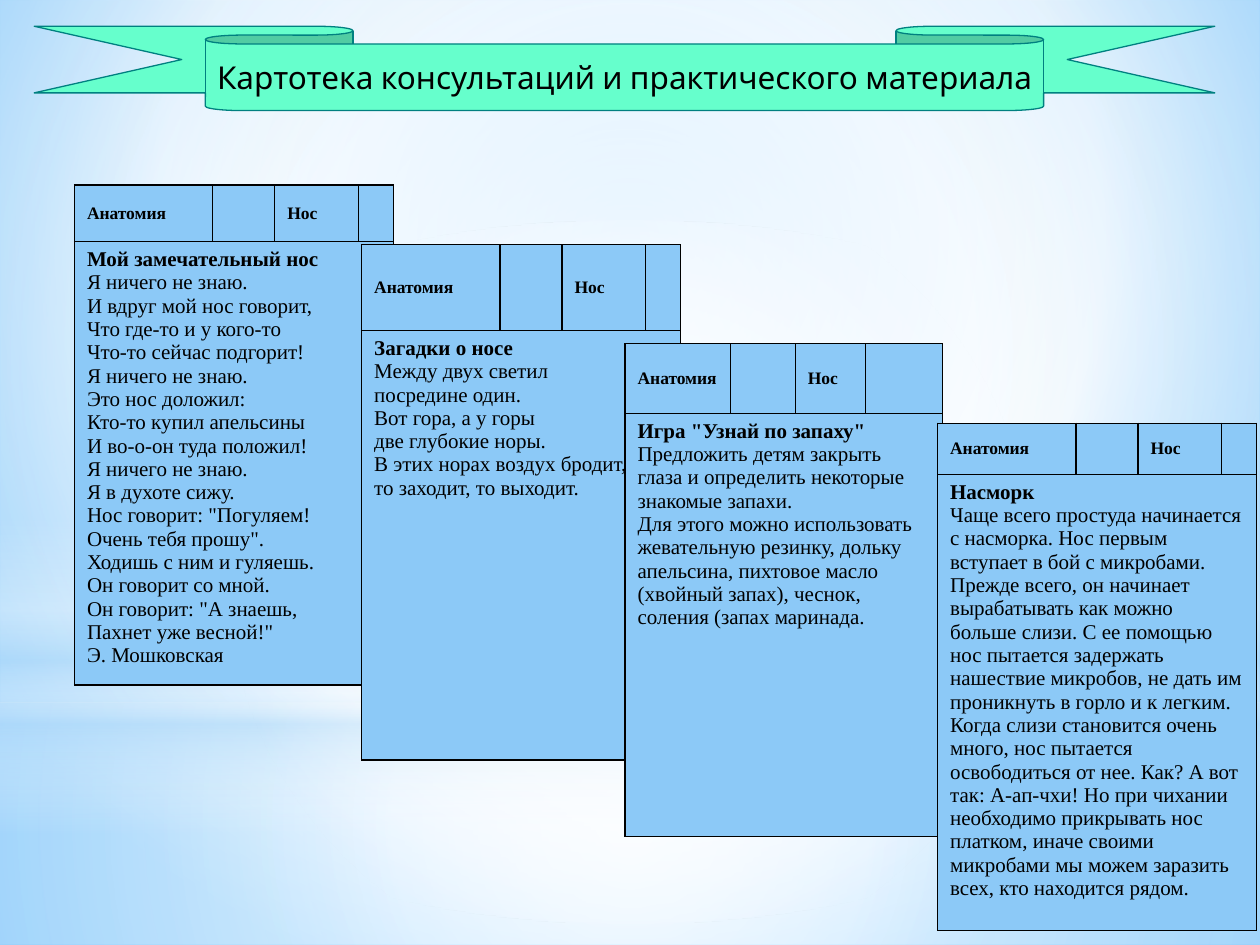
from dataclasses import dataclass

from lxml import etree
from pptx import Presentation
from pptx.dml.color import RGBColor
from pptx.enum.shapes import MSO_SHAPE
from pptx.enum.text import MSO_ANCHOR, PP_ALIGN
from pptx.oxml.ns import qn
from pptx.util import Cm, Pt

RECTANGLE = MSO_SHAPE.RECTANGLE
OVAL = MSO_SHAPE.OVAL
RIBBON = MSO_SHAPE.DOWN_RIBBON
MIDDLE = MSO_ANCHOR.MIDDLE
TOP = MSO_ANCHOR.TOP
CENTER = PP_ALIGN.CENTER

COLORS = {
    "white": "FFFFFF",
    "pale_blue": "B4DCFA",
    "sky": "9ED5FF",
    "deep_sky": "5BB9FF",
    "card": "8CC9F7",
    "ribbon": "66FFCC",
    "ribbon_line": "008080",
    "ink": "000000",
}
CARD_FONT = "Times New Roman"
TITLE_FONT = "Karla"
MIDPOINT = (50, 50, 50, 50)


@dataclass
class Gradient:
    stops: list[tuple[int, str, int]]
    focus: tuple[int, int, int, int] | None = MIDPOINT


@dataclass
class Glow:
    kind: int
    top: float
    height: float
    gradient: Gradient


@dataclass
class Card:
    left: float
    top: float
    columns: tuple[float, ...]
    rows: tuple[float, float]
    heading: str
    paragraphs: list[str]


BACKDROP = Gradient([(0, "sky", 100), (60, "white", 100), (100, "deep_sky", 100)], (20, 10, 20, 60))
GLOWS = [
    Glow(RECTANGLE, 14.17, 4.88, Gradient([(0, "white", 91), (37, "white", 76), (100, "pale_blue", 79)])),
    Glow(RECTANGLE, 0, 14.17, Gradient([(0, "white", 89), (48, "white", 62), (100, "pale_blue", 79)])),
    Glow(RECTANGLE, 10.46, 6.35, Gradient([
        (0, "white", 0), (29, "white", 30), (45, "pale_blue", 40),
        (55, "white", 26), (65, "pale_blue", 60), (100, "white", 0)], None)),
    Glow(OVAL, 4.45, 14.17, Gradient([(0, "white", 100), (56, "white", 0)])),
]

WIDE_COLUMNS = (2.79, 1.25, 1.68, 0.71)
CARDS = [
    Card(1.5, 3.73, WIDE_COLUMNS, (1.14, 8.94), "Мой замечательный нос", [
        "Я ничего не знаю.\nИ вдруг мой нос говорит,\nЧто где-то и у кого-то\n"
        "Что-то сейчас подгорит!\nЯ ничего не знаю.\nЭто нос доложил:\n"
        "Кто-то купил апельсины\nИ во-о-он туда положил!\nЯ ничего не знаю.\n"
        "Я в духоте сижу.\nНос говорит: \"Погуляем!\nОчень тебя прошу\".\n"
        "Ходишь с ним и гуляешь.\nОн говорит со мной.\nОн говорит: \"А знаешь,\n"
        "Пахнет уже весной!\"",
        "Э. Мошковская"]),
    Card(7.29, 4.93, WIDE_COLUMNS, (1.73, 8.66), "Загадки о носе", [
        "Между двух светил",
        "посредине один.\nВот гора, а у горы",
        "две глубокие норы.\nВ этих норах воздух бродит,\nто заходит, то выходит."]),
    Card(12.6, 6.93, (2.13, 1.3, 1.42, 1.55), (1.4, 8.53), "Игра \"Узнай по запаху\"", [
        "Предложить детям закрыть глаза и определить некоторые знакомые запахи.",
        "Для этого можно использовать жевательную резинку, дольку апельсина, "
        "пихтовое масло (хвойный запах), чеснок, соления (запах маринада."]),
    Card(18.9, 8.53, WIDE_COLUMNS, (0.99, 9.19), "Насморк", [
        "Чаще всего простуда начинается с насморка. Нос первым вступает в бой с "
        "микробами. Прежде всего, он начинает вырабатывать как можно больше слизи. "
        "С ее помощью нос пытается задержать нашествие микробов, не дать им "
        "проникнуть в горло и к легким. Когда слизи становится очень много, нос "
        "пытается освободиться от нее. Как? А вот так: А-ап-чхи! Но при чихании "
        "необходимо прикрывать нос платком, иначе своими микробами мы можем "
        "заразить всех, кто находится рядом."]),
]


def color(name: str) -> RGBColor:
    return RGBColor.from_string(COLORS[name])


def add_element(parent, tag: str, **attributes):
    return etree.SubElement(parent, qn(tag), {key: str(value) for key, value in attributes.items()})


def paint_gradient(fill, owner, gradient: Gradient) -> None:
    fill.gradient()
    element = owner.find(".//" + qn("a:gradFill"))
    for child in list(element):
        element.remove(child)
    stop_list = add_element(element, "a:gsLst")
    for position, name, opacity in gradient.stops:
        stop = add_element(stop_list, "a:gs", pos=position * 1000)
        stop_color = add_element(stop, "a:srgbClr", val=COLORS[name])
        if opacity < 100:
            add_element(stop_color, "a:alpha", val=opacity * 1000)
    if gradient.focus is None:
        add_element(element, "a:lin", ang=90 * 60000, scaled=0)
    else:
        circle = add_element(element, "a:path", path="circle")
        sides = {side: value * 1000 for side, value in zip("ltrb", gradient.focus)}
        add_element(circle, "a:fillToRect", **sides)


def add_glow(slide, glow: Glow) -> None:
    shape = slide.shapes.add_shape(glow.kind, 0, Cm(glow.top), Cm(25.4), Cm(glow.height))
    shape.shadow.inherit = False
    shape.line.fill.background()
    paint_gradient(shape.fill, shape._element.spPr, glow.gradient)


def format_font(font, size: float, name: str, bold: bool) -> None:
    for attribute, value in {"size": Pt(size), "name": name, "bold": bold}.items():
        setattr(font, attribute, value)
    font.color.rgb = color("ink")


def write_paragraph(paragraph, text: str, size: float, name: str, bold: bool = False) -> None:
    paragraph.text = text
    for run in paragraph.runs:
        format_font(run.font, size, name, bold)
    for line_break in paragraph._p.findall(qn("a:br")):
        add_element(line_break, "a:rPr", sz=size * 100)


def style_cell(cell) -> None:
    properties = cell._tc.get_or_add_tcPr()
    for side in ("L", "R", "T", "B"):
        border = add_element(properties, f"a:ln{side}", w=Pt(0.75))
        add_element(add_element(border, "a:solidFill"), "a:srgbClr", val=COLORS["ink"])
    cell.fill.solid()
    cell.fill.fore_color.rgb = color("card")


def add_card(slide, card: Card) -> None:
    frame = slide.shapes.add_table(2, 4, Cm(card.left), Cm(card.top),
                                   Cm(sum(card.columns)), Cm(sum(card.rows)))
    table = frame.table
    table.first_row = table.horz_banding = False
    for column, width in zip(table.columns, card.columns):
        column.width = Cm(width)
    for row, height in zip(table.rows, card.rows):
        row.height = Cm(height)
    for cell in table.iter_cells():
        style_cell(cell)
    for index, label in ((0, "Анатомия"), (2, "Нос")):
        cell = table.cell(0, index)
        cell.vertical_anchor = MIDDLE
        write_paragraph(cell.text_frame.paragraphs[0], label, 10, CARD_FONT, True)
    body = table.cell(1, 0)
    body.merge(table.cell(1, 3))
    body.vertical_anchor = TOP
    write_paragraph(body.text_frame.paragraphs[0], card.heading, 12, CARD_FONT, True)
    for text in card.paragraphs:
        write_paragraph(body.text_frame.add_paragraph(), text, 12, CARD_FONT)


def add_title_ribbon(slide) -> None:
    ribbon = slide.shapes.add_shape(RIBBON, Cm(0.69), Cm(0.53), Cm(23.8), Cm(1.7))
    ribbon.shadow.inherit = False
    ribbon.adjustments[0] = 0.21
    ribbon.adjustments[1] = 0.71
    ribbon.fill.solid()
    ribbon.fill.fore_color.rgb = color("ribbon")
    ribbon.line.color.rgb = color("ribbon_line")
    ribbon.line.width = Pt(0.75)

    title = slide.shapes.title
    place = {"left": Cm(4.18), "top": Cm(0.88), "width": Cm(16.83), "height": Cm(1.35)}
    for attribute, value in place.items():
        setattr(title, attribute, value)
    frame = title.text_frame
    layout = {"vertical_anchor": MIDDLE, "word_wrap": False, "margin_left": 0,
              "margin_right": 0, "margin_top": 0, "margin_bottom": 0}
    for attribute, value in layout.items():
        setattr(frame, attribute, value)
    paragraph = frame.paragraphs[0]
    write_paragraph(paragraph, "Картотека консультаций и практического материала", 18, TITLE_FONT)
    paragraph.alignment = CENTER
    ribbon._element.addnext(title._element)


def main() -> None:
    presentation = Presentation()
    presentation.slide_width, presentation.slide_height = Cm(25.4), Cm(19.05)
    slide = presentation.slides.add_slide(presentation.slide_layouts[5])
    paint_gradient(slide.background.fill, slide._element, BACKDROP)
    for glow in GLOWS:
        add_glow(slide, glow)
    add_title_ribbon(slide)
    for card in CARDS:
        add_card(slide, card)
    presentation.save("out.pptx")


if __name__ == "__main__":
    main()
